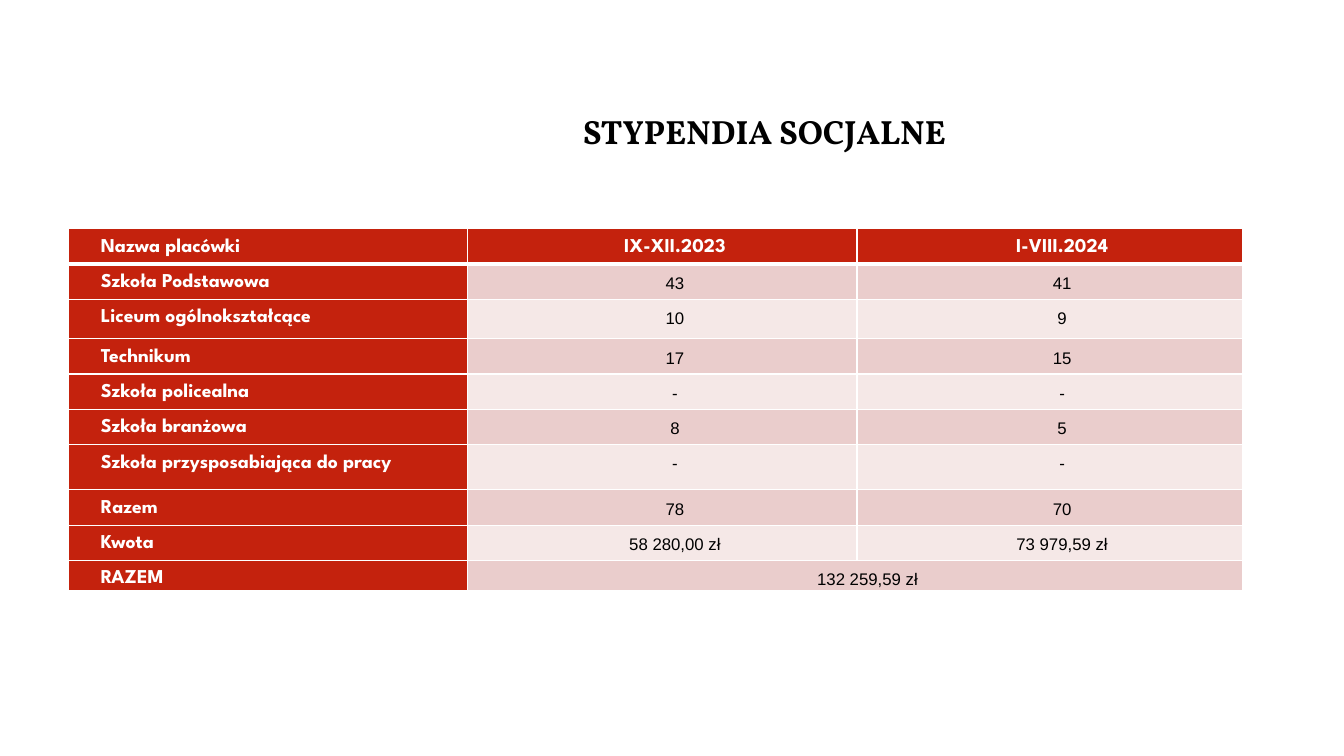
from typing import NamedTuple

from lxml import etree
from pptx import Presentation
from pptx.dml.color import RGBColor
from pptx.enum import text as t
from pptx.oxml import ns
from pptx.util import Inches, Pt

RED = RGBColor(0xC4, 0x22, 0x0D)
ROSE = RGBColor(0xEA, 0xCD, 0xCC)
PALE = RGBColor(0xF5, 0xE8, 0xE7)
WHITE = RGBColor(0xFF, 0xFF, 0xFF)
BLACK = RGBColor(0, 0, 0)

COLS = (3.96, 3.86, 3.82)


class Row(NamedTuple):
    high: float
    cells: tuple[str, ...]


class Look(NamedTuple):
    font: str
    size: int
    ink: RGBColor
    bold: bool


HEAD = Look("League Spartan", 14, WHITE, True)
BODY = Look("Arial", 12, BLACK, False)
TITLE = Look("Vollkorn", 24, BLACK, True)

ROWS = (
    Row(0.35, ("Nazwa placówki", "IX-XII.2023", "I-VIII.2024")),
    Row(0.35, ("Szkoła Podstawowa", "43", "41")),
    Row(0.39, ("Liceum ogólnokształcące", "10", "9")),
    Row(0.35, ("Technikum", "17", "15")),
    Row(0.35, ("Szkoła policealna", "-", "-")),
    Row(0.35, ("Szkoła branżowa", "8", "5")),
    Row(0.45, ("Szkoła przysposabiająca do pracy", "-", "-")),
    Row(0.35, ("Razem", "78", "70")),
    Row(0.35, ("Kwota", "58 280,00 zł", "73 979,59 zł")),
    Row(0.3, ("RAZEM", "132 259,59 zł")),
)


def add_run(para, words: str, look: Look) -> None:
    run = para.add_run()
    run.text = words
    font = run.font
    font.name, font.size, font.bold = look.font, Pt(look.size), look.bold
    font.color.rgb = look.ink


def add_edges(cell, row: int) -> None:
    """Draw white cell borders, thicker under the header row."""
    props = cell._tc.get_or_add_tcPr()
    for side in "LRTB":
        thick = (row, side) in ((0, "B"), (1, "T"))
        line = etree.SubElement(props, ns.qn(f"a:ln{side}"), w=str(Pt(3 if thick else 1)))
        fill = etree.SubElement(line, ns.qn("a:solidFill"))
        etree.SubElement(fill, ns.qn("a:srgbClr"), val=str(WHITE))


def fill_cell(cell, words: str, row: int, col: int) -> None:
    head = row == 0 or col == 0
    cell.margin_left = cell.margin_right = Inches(0.07)
    cell.margin_top = cell.margin_bottom = 0
    para = cell.text_frame.paragraphs[0]
    props = para._p.get_or_add_pPr()
    props.set("marL", str(Inches(0.26)))
    props.set("indent", str(Inches(-0.01)))
    para.alignment = t.PP_ALIGN.CENTER if col else t.PP_ALIGN.JUSTIFY
    para.line_spacing = 1.54
    para.space_after = Pt(0.2)
    add_run(para, words, HEAD if head else BODY)
    add_edges(cell, row)
    cell.fill.solid()
    cell.fill.fore_color.rgb = RED if head else ROSE if row % 2 else PALE


def add_title(slide) -> None:
    title = slide.shapes.title
    title.left, title.top = Inches(5.24), Inches(1.02)
    title.width, title.height = Inches(4.24), Inches(0.62)
    frame = title.text_frame
    frame.auto_size = t.MSO_AUTO_SIZE.NONE
    frame.vertical_anchor = t.MSO_ANCHOR.MIDDLE
    para = frame.paragraphs[0]
    para.alignment = t.PP_ALIGN.RIGHT
    para.line_spacing = 0.9
    add_run(para, "STYPENDIA SOCJALNE", TITLE)


def add_grants(slide) -> None:
    grid = slide.shapes.add_table(
        len(ROWS), len(COLS), Inches(0.68), Inches(2.27),
        Inches(sum(COLS)), Inches(sum(row.high for row in ROWS))).table
    for col, wide in zip(grid.columns, COLS):
        col.width = Inches(wide)
    last = len(ROWS) - 1
    grid.cell(last, 1).merge(grid.cell(last, 2))
    for r, row in enumerate(ROWS):
        grid.rows[r].height = Inches(row.high)
        for c, words in enumerate(row.cells):
            fill_cell(grid.cell(r, c), words, r, c)


def main() -> None:
    deck = Presentation()
    deck.slide_width, deck.slide_height = Inches(13.33), Inches(7.5)
    slide = deck.slides.add_slide(deck.slide_layouts[5])
    add_title(slide)
    add_grants(slide)
    deck.save("out.pptx")


if __name__ == "__main__":
    main()
